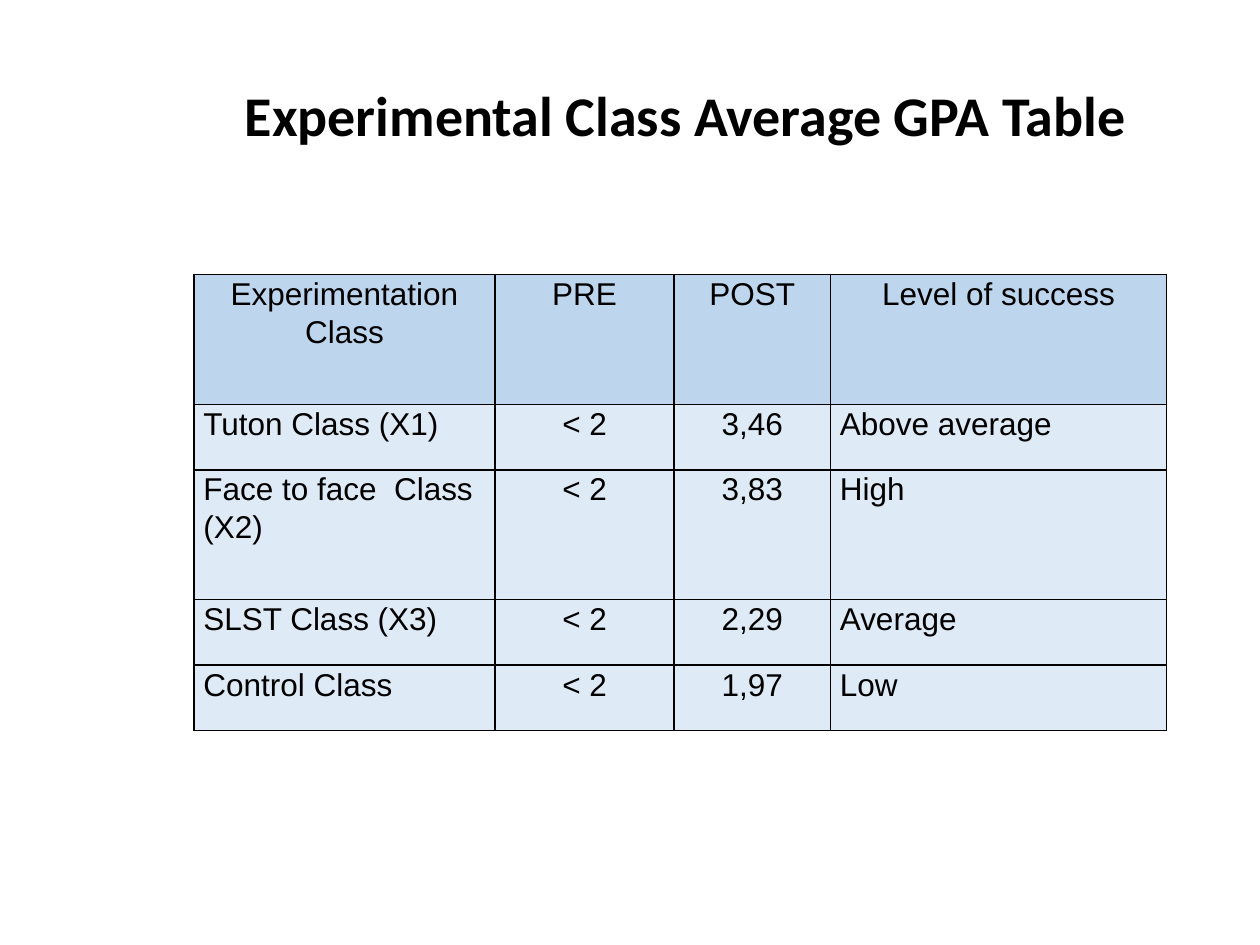
from pptx import Presentation
from pptx.dml.color import RGBColor
from pptx.enum.text import MSO_ANCHOR, PP_ALIGN
from pptx.oxml import parse_xml
from pptx.oxml.ns import nsdecls
from pptx.util import Cm, Pt

COLORS = {"text": "000000", "border": "000000", "header": "BDD6EE", "body": "DEEAF6"}


def write(frame, text, font="Arial", size=18, bold=False, align=PP_ALIGN.LEFT, spacing=1.0):
    paragraph = frame.paragraphs[0]
    paragraph.alignment = align
    paragraph.line_spacing = spacing
    run = paragraph.add_run()
    run.text = text
    run.font.name = font
    run.font.size = Pt(size)
    run.font.bold = bold
    run.font.color.rgb = RGBColor.from_string(COLORS["text"])


def add_borders(cell):
    properties = cell._tc.get_or_add_tcPr()
    for side in ("lnL", "lnR", "lnT", "lnB"):
        properties.append(parse_xml(
            f'<a:{side} {nsdecls("a")} w="{Pt(1)}"><a:solidFill>'
            f'<a:srgbClr val="{COLORS["border"]}"/></a:solidFill></a:{side}>'))


prs = Presentation()
prs.slide_width, prs.slide_height = Cm(25.4), Cm(19.05)
slide = prs.slides.add_slide(prs.slide_layouts[5])

heading = slide.shapes.title
heading.left, heading.top, heading.width, heading.height = Cm(1.27), Cm(1.12), Cm(22.86), Cm(3.6)
heading.text_frame.margin_left = Cm(2.5)
heading.text_frame.margin_bottom = Cm(1.35)
heading.text_frame.vertical_anchor = MSO_ANCHOR.MIDDLE
write(heading.text_frame, "Experimental Class Average GPA Table",
      font="Calibri", size=32, bold=True, align=PP_ALIGN.CENTER)

results = [
    ("Experimentation Class", "PRE", "POST", "Level of success"),
    ("Tuton Class (X1)", "< 2", "3,46", "Above average"),
    ("Face to face  Class (X2)", "< 2", "3,83", "High"),
    ("SLST Class (X3)", "< 2", "2,29", "Average"),
    ("Control Class", "< 2", "1,97", "Low"),
]
column_widths = [6.07, 3.61, 3.15, 6.78]
row_heights = [2.62, 1.32, 2.62, 1.32, 1.32]

gpa_table = slide.shapes.add_table(
    len(results), len(column_widths), Cm(3.91), Cm(5.53),
    Cm(sum(column_widths)), Cm(sum(row_heights))).table
gpa_table.first_row = False
gpa_table.horz_banding = False
for column, width in zip(gpa_table.columns, column_widths):
    column.width = Cm(width)

for r, (row, height, entries) in enumerate(zip(gpa_table.rows, row_heights, results)):
    row.height = Cm(height)
    for c, (cell, entry) in enumerate(zip(row.cells, entries)):
        cell.margin_left = cell.margin_right = Cm(0.19)
        cell.margin_top = cell.margin_bottom = 0
        add_borders(cell)
        cell.fill.solid()
        cell.fill.fore_color.rgb = RGBColor.from_string(COLORS["header" if r == 0 else "body"])
        centered = r == 0 or c in (1, 2)
        write(cell.text_frame, entry, spacing=1.07,
              align=PP_ALIGN.CENTER if centered else PP_ALIGN.LEFT)

prs.save("out.pptx")
